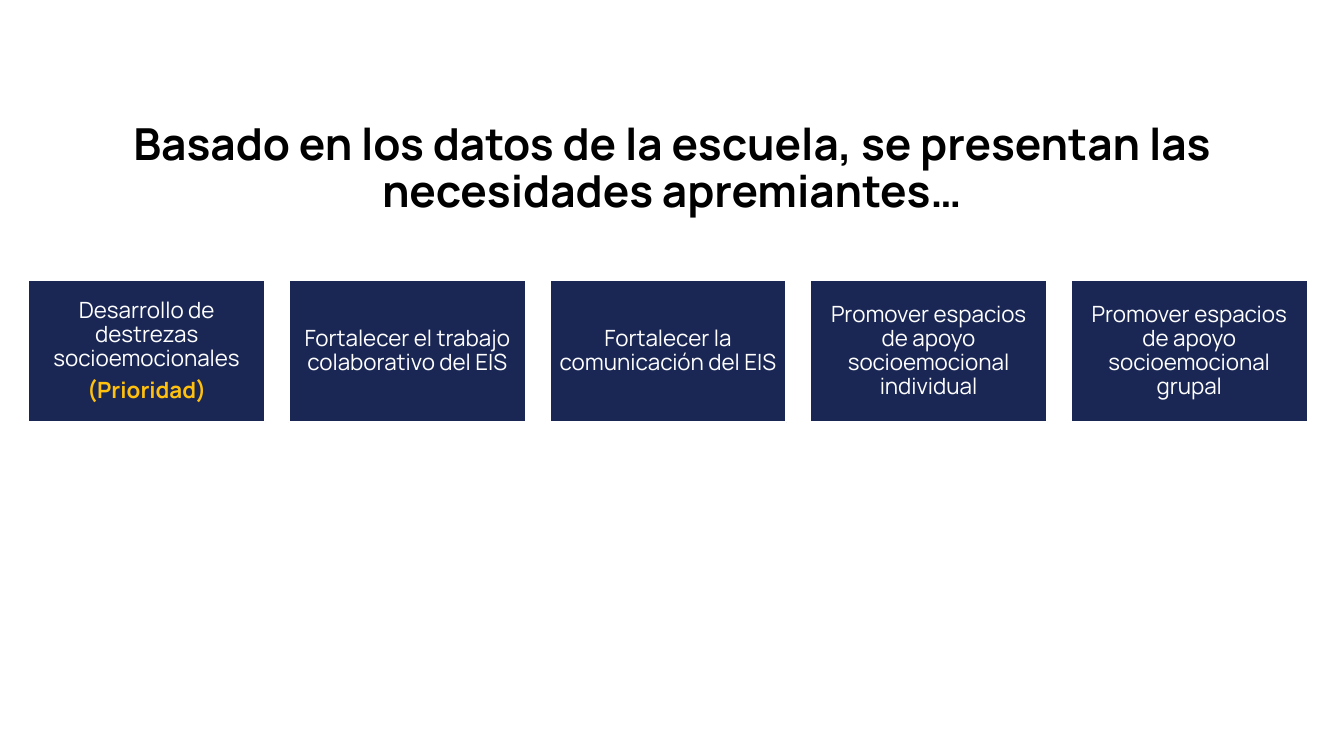
import pptx
import pptx.dml.color
import pptx.enum.shapes
import pptx.enum.text
import pptx.util
from pptx.util import Inches

COLORS = {"title": "000000", "card": "1A2754", "light": "FFFFFF", "priority": "FFC10E"}

TITLE = "Basado en los datos de la escuela, se presentan las necesidades apremiantes…"
PRIORITY = "(Prioridad)"
NEEDS = [
    ["Desarrollo de destrezas socioemocionales", PRIORITY],
    ["Fortalecer el trabajo colaborativo del EIS"],
    ["Fortalecer la comunicación del EIS"],
    ["Promover espacios de apoyo socioemocional individual"],
    ["Promover espacios de apoyo socioemocional grupal"],
]

CARD_LEFT, CARD_TOP = 0.28, 2.78
CARD_WIDTH, CARD_HEIGHT = 2.35, 1.41
CARD_STEP = 2.585


def color(name):
    return pptx.dml.color.RGBColor.from_string(COLORS[name])


class NeedsPage:
    font_name = "Manrope"
    title_size = 31.5
    card_size = 16

    def __init__(self, deck):
        self.page = deck.slides.add_slide(deck.slide_layouts[6])

    def style_para(self, para, text, size, color_name, bold=False):
        para.text = text
        para.alignment = pptx.enum.text.PP_ALIGN.CENTER
        para.line_spacing = 0.9
        para.font.name = self.font_name
        para.font.size = pptx.util.Pt(size)
        para.font.bold = bold
        para.font.color.rgb = color(color_name)

    def add_title(self, text, left, top, width, height):
        box = self.page.shapes.add_textbox(
            Inches(left), Inches(top), Inches(width), Inches(height))
        frame = box.text_frame
        frame.word_wrap = True
        frame.vertical_anchor = pptx.enum.text.MSO_ANCHOR.MIDDLE
        self.style_para(frame.paragraphs[0], text, self.title_size, "title", bold=True)

    def add_card(self, lines, left, top, width, height):
        card = self.page.shapes.add_shape(
            pptx.enum.shapes.MSO_SHAPE.RECTANGLE,
            Inches(left), Inches(top), Inches(width), Inches(height))
        card.shadow.inherit = False
        card.fill.solid()
        card.fill.fore_color.rgb = color("card")
        card.line.color.rgb = color("light")
        card.line.width = pptx.util.Pt(1.5)

        frame = card.text_frame
        frame.word_wrap = True
        frame.vertical_anchor = pptx.enum.text.MSO_ANCHOR.MIDDLE
        frame.margin_left = frame.margin_right = Inches(0.07)
        frame.margin_top = frame.margin_bottom = Inches(0.07)
        for index, line in enumerate(lines):
            para = frame.add_paragraph() if index else frame.paragraphs[0]
            urgent = line == PRIORITY
            self.style_para(para, line, self.card_size,
                            "priority" if urgent else "light", bold=urgent)
            para.space_after = pptx.util.Pt(0.35 * self.card_size)


def main():
    deck = pptx.Presentation()
    deck.slide_width = Inches(13.33)
    deck.slide_height = Inches(7.5)

    page = NeedsPage(deck)
    page.add_title(TITLE, 0.6, 1.11, 12.13, 1.15)
    for column, lines in enumerate(NEEDS):
        page.add_card(lines, CARD_LEFT + column * CARD_STEP, CARD_TOP,
                      CARD_WIDTH, CARD_HEIGHT)

    deck.save("out.pptx")


if __name__ == "__main__":
    main()
